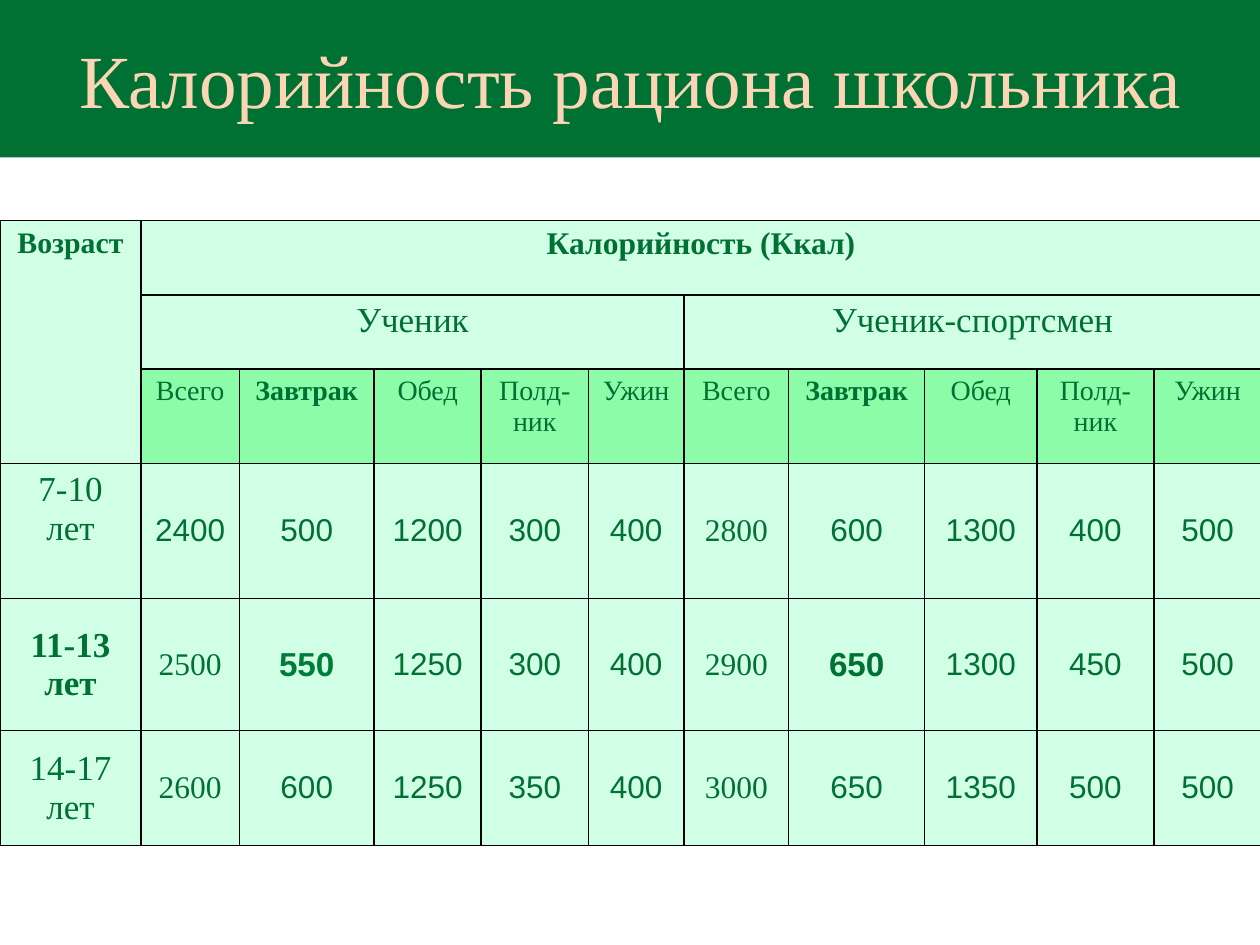
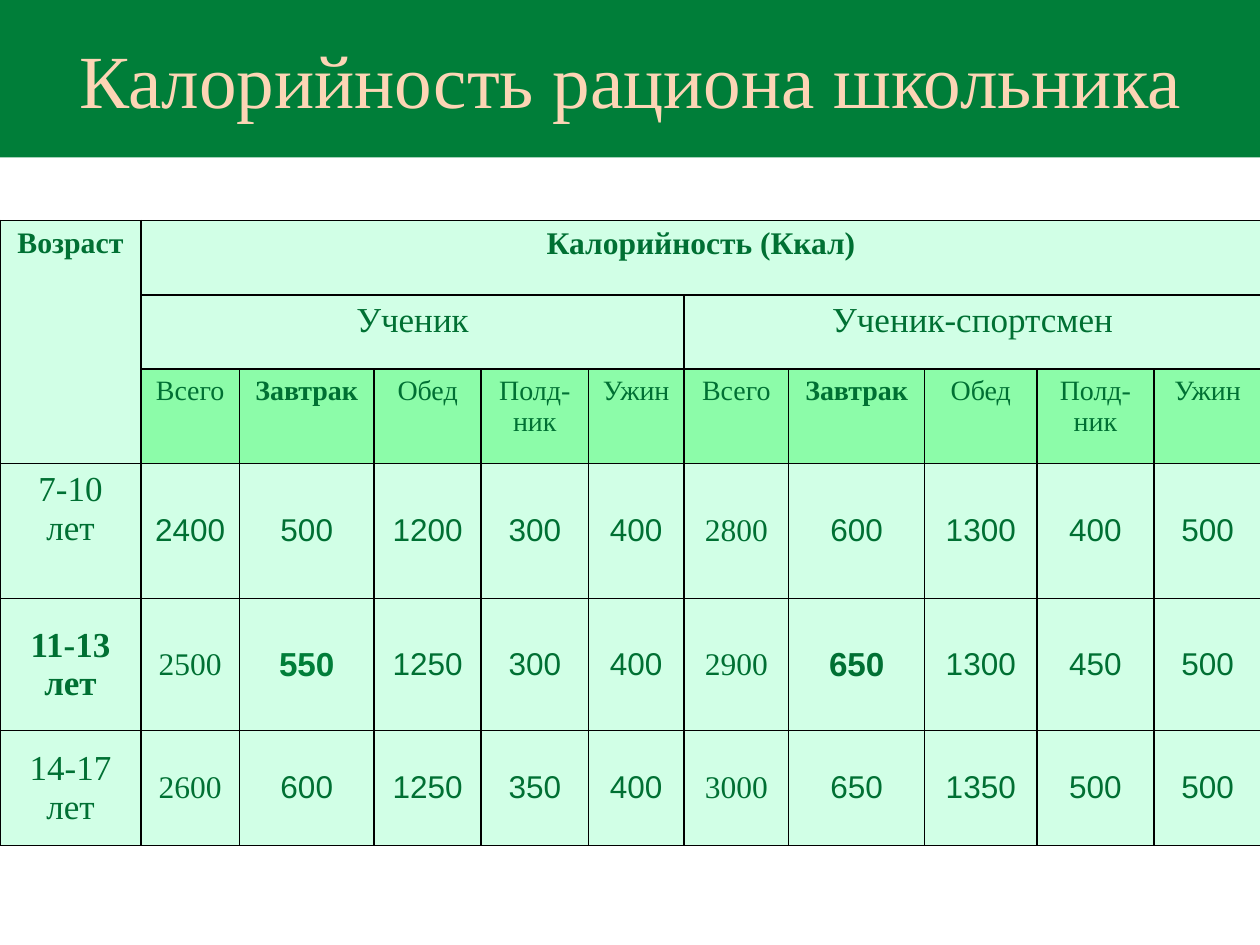
from lxml.etree import SubElement
from pptx import Presentation
from pptx.dml.color import RGBColor
from pptx.enum.shapes import MSO_SHAPE
from pptx.enum.text import MSO_ANCHOR, PP_ALIGN
from pptx.oxml.ns import qn
from pptx.util import Inches, Pt

DARK_GREEN = RGBColor(0x00, 0x70, 0x33)
BRIGHT_GREEN = RGBColor(0x00, 0x7E, 0x39)
PEACH = RGBColor(0xFC, 0xD5, 0xB5)
PALE_MINT = RGBColor(0xD1, 0xFF, 0xE6)
MINT = RGBColor(0x8C, 0xFC, 0xA9)
BLACK = RGBColor(0x00, 0x00, 0x00)

SERIF = "Times New Roman"
SANS = "Arial"

TITLE = "Калорийность рациона школьника"
COLUMN_WIDTHS = [1.12, 0.78, 1.07, 0.85, 0.85, 0.76, 0.83, 1.08, 0.89, 0.93, 0.85]
ROW_HEIGHTS = [0.59, 0.59, 0.75, 1.07, 1.05, 0.91]
MEALS = ["Всего", "Завтрак", "Обед", "Полд-ник", "Ужин"]
CALORIES = {
    "7-10 лет": [2400, 500, 1200, 300, 400, 2800, 600, 1300, 400, 500],
    "11-13 лет": [2500, 550, 1250, 300, 400, 2900, 650, 1300, 450, 500],
    "14-17 лет": [2600, 600, 1250, 350, 400, 3000, 650, 1350, 500, 500],
}
FIRST_AGE, KEY_AGE = "7-10 лет", "11-13 лет"
TOTAL_COLUMNS = (1, 6)
BREAKFAST_COLUMNS = (2, 7)


def write_text(text_frame, text, size, font=SERIF, color=DARK_GREEN, bold=False):
    """Write one centred paragraph in the given format."""
    paragraph = text_frame.paragraphs[0]
    paragraph.alignment = PP_ALIGN.CENTER
    run = paragraph.add_run()
    run.text = text
    run.font.size = Pt(size)
    run.font.name = font
    run.font.bold = bold
    run.font.color.rgb = color


def add_title_band(slide, fill):
    """Draw the full-width band that carries the slide title."""
    band = slide.shapes.add_shape(MSO_SHAPE.RECTANGLE, 0, 0, Inches(10), Inches(1.25))
    band.shadow.inherit = False
    band.fill.solid()
    band.fill.fore_color.rgb = fill
    band.line.fill.background()
    band.text_frame.word_wrap = True
    band.text_frame.vertical_anchor = MSO_ANCHOR.MIDDLE
    write_text(band.text_frame, TITLE, size=42.9, color=PEACH)


def style_cell(cell, fill):
    """Give a cell thin black borders and a solid fill."""
    properties = cell._tc.get_or_add_tcPr()
    for side in ("a:lnL", "a:lnR", "a:lnT", "a:lnB"):
        line = SubElement(properties, qn(side), w=str(Pt(1)))
        color = SubElement(SubElement(line, qn("a:solidFill")), qn("a:srgbClr"))
        color.set("val", str(BLACK))
    cell.fill.solid()
    cell.fill.fore_color.rgb = fill


def fill_header(table):
    """Merge and label the three heading rows."""
    headings = [
        ((0, 0), (2, 0), "Возраст", 17, True),
        ((0, 1), (0, 10), "Калорийность (Ккал)", 18, True),
        ((1, 1), (1, 5), "Ученик", 20, False),
        ((1, 6), (1, 10), "Ученик-спортсмен", 20, False),
    ]
    for first, last, text, size, bold in headings:
        cell = table.cell(*first)
        cell.merge(table.cell(*last))
        write_text(cell.text_frame, text, size=size, bold=bold)
    for column, meal in enumerate(MEALS * 2, start=1):
        write_text(table.cell(2, column).text_frame, meal, size=16,
                   bold=column in BREAKFAST_COLUMNS)


def fill_calories(table):
    """Write the calorie values of each age group."""
    for row, (age, values) in enumerate(CALORIES.items(), start=3):
        age_cell = table.cell(row, 0)
        age_cell.vertical_anchor = MSO_ANCHOR.TOP if age == FIRST_AGE else MSO_ANCHOR.MIDDLE
        write_text(age_cell.text_frame, age, size=20, bold=age == KEY_AGE)
        for column, value in enumerate(values, start=1):
            cell = table.cell(row, column)
            cell.vertical_anchor = MSO_ANCHOR.MIDDLE
            is_key = age == KEY_AGE and column in BREAKFAST_COLUMNS
            is_serif = column in TOTAL_COLUMNS and (row, column) != (3, 1)
            write_text(cell.text_frame, str(value), size=19 if is_key else 18,
                       font=SERIF if is_serif else SANS, bold=is_key,
                       color=BRIGHT_GREEN if is_key and column == 2 else DARK_GREEN)


def add_calorie_table(slide):
    """Build the calorie table below the title band."""
    frame = slide.shapes.add_table(
        len(ROW_HEIGHTS), len(COLUMN_WIDTHS), 0, Inches(1.75),
        Inches(sum(COLUMN_WIDTHS)), Inches(sum(ROW_HEIGHTS)))
    table = frame.table
    table.first_row = table.horz_banding = False
    for column, width in zip(table.columns, COLUMN_WIDTHS):
        column.width = Inches(width)
    for row, height in zip(table.rows, ROW_HEIGHTS):
        row.height = Inches(height)
    for row in range(len(ROW_HEIGHTS)):
        for column in range(len(COLUMN_WIDTHS)):
            is_meal = row == 2 and column > 0
            style_cell(table.cell(row, column), MINT if is_meal else PALE_MINT)
    fill_header(table)
    fill_calories(table)


def main():
    """Build and save the presentation."""
    presentation = Presentation()
    presentation.slide_width = Inches(10)
    presentation.slide_height = Inches(7.5)
    for band_color in (DARK_GREEN, BRIGHT_GREEN):
        slide = presentation.slides.add_slide(presentation.slide_layouts[6])
        add_title_band(slide, band_color)
        add_calorie_table(slide)
    presentation.save("out.pptx")


if __name__ == "__main__":
    main()
